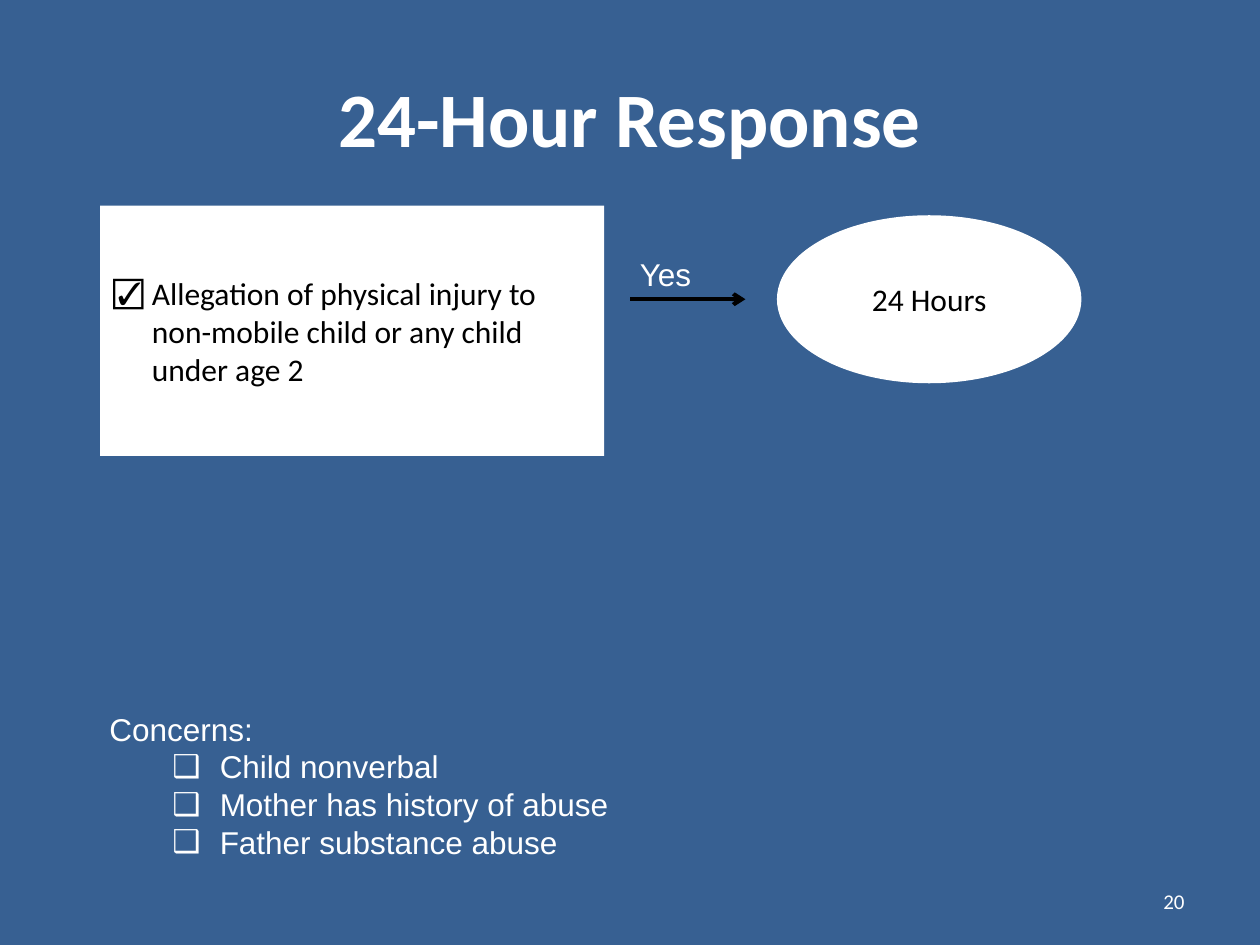
from dataclasses import dataclass

import pptx
import pptx.dml.color
import pptx.enum.shapes
import pptx.enum.text
import pptx.oxml.ns
import pptx.util
from lxml import etree

Pt = pptx.util.Pt
Align = pptx.enum.text.PP_ALIGN
Anchor = pptx.enum.text.MSO_ANCHOR
Kind = pptx.enum.shapes.MSO_SHAPE
HEX = {"back": "376092", "white": "FFFFFF", "black": "000000"}


@dataclass
class Line:
    text: str
    left: float = 0
    hang: float = 0
    mark: str = ""


@dataclass
class Box:
    area: tuple[float, float, float, float]
    lines: list[Line]
    font: str = "Calibri"
    size: float = 18
    color: str = "white"
    bold: bool = False
    align: Align = Align.LEFT
    anchor: Anchor = Anchor.MIDDLE
    kind: Kind | None = None
    grow: bool = False


def rgb(name: str) -> pptx.dml.color.RGBColor:
    return pptx.dml.color.RGBColor.from_string(HEX[name])


def add_tag(node, tag: str, **attrs: str):
    return etree.SubElement(node, pptx.oxml.ns.qn(tag), attrs)


def set_indent(para, line: Line) -> None:
    """Apply the hanging indent and the bullet, if there is one."""
    props = para._p.get_or_add_pPr()
    if line.left:
        props.set("marL", str(Pt(line.left)))
        props.set("indent", str(Pt(-line.hang)))
    if line.mark:
        add_tag(props, "a:buFont", typeface="Arial")
        add_tag(props, "a:buChar", char=line.mark)


def add_box(slide, box: Box) -> None:
    area = [Pt(n) for n in box.area]
    if box.kind is None:
        shape = slide.shapes.add_textbox(*area)
    else:
        shape = slide.shapes.add_shape(box.kind, *area)
        shape.shadow.inherit = False
        shape.fill.solid()
        shape.fill.fore_color.rgb = rgb("white")
        shape.line.fill.background()
    frame = shape.text_frame
    frame.word_wrap = True
    frame.vertical_anchor = box.anchor
    if box.grow:
        frame.auto_size = pptx.enum.text.MSO_AUTO_SIZE.SHAPE_TO_FIT_TEXT
    for i, line in enumerate(box.lines):
        para = frame.add_paragraph() if i else frame.paragraphs[0]
        para.alignment = box.align
        set_indent(para, line)
        run = para.add_run()
        run.text = line.text
        run.font.name = box.font
        run.font.size = Pt(box.size)
        run.font.bold = box.bold
        run.font.color.rgb = rgb(box.color)


def add_arrow(slide, left: float, right: float, y: float) -> None:
    arrow = slide.shapes.add_connector(
        pptx.enum.shapes.MSO_CONNECTOR.STRAIGHT, Pt(left), Pt(y), Pt(right), Pt(y)
    )
    arrow.line.color.rgb = rgb("black")
    arrow.line.width = Pt(2.25)
    add_tag(arrow.line._get_or_add_ln(), "a:tailEnd", type="arrow")
    add_tag(arrow._element.spPr, "a:effectLst")


HANG = 27
ISSUES = ["Child nonverbal", "Mother has history of abuse", "Father substance abuse"]
TITLE = Box((36, 21.6, 648, 90), [Line("24-Hour Response")],
            size=44, bold=True, align=Align.CENTER)
NUMBER = Box((516, 500.4, 168, 28.8), [Line("20")], size=12, align=Align.RIGHT)
CONCERNS = Box(
    (55.5, 402, 612, 127.5),
    [Line("Concerns:", HANG, HANG)]
    + [Line(text, HANG + 36, HANG, "❑") for text in ISSUES],
    font="Arial", anchor=Anchor.TOP, grow=True,
)
CLAIM = Box(
    (57.25, 117.5, 288, 143),
    [Line("Allegation of physical injury to non-mobile child or any child under age 2",
          22.5, 22.5, "☑")],
    color="black", kind=Kind.RECTANGLE,
)
HOURS = Box((444, 123, 174, 96), [Line("24 Hours")],
            color="black", align=Align.CENTER, kind=Kind.OVAL)
YES = Box((358.5, 142, 62.5, 29), [Line("Yes")],
          font="Arial", anchor=Anchor.TOP, grow=True)


def main() -> None:
    deck = pptx.Presentation()
    deck.slide_width, deck.slide_height = Pt(720), Pt(540)
    slide = deck.slides.add_slide(deck.slide_layouts[6])
    slide.background.fill.solid()
    slide.background.fill.fore_color.rgb = rgb("back")
    for box in (TITLE, NUMBER, CONCERNS, CLAIM):
        add_box(slide, box)
    add_arrow(slide, 360, 426, 171)
    for box in (HOURS, YES):
        add_box(slide, box)
    deck.save("out.pptx")


if __name__ == "__main__":
    main()
